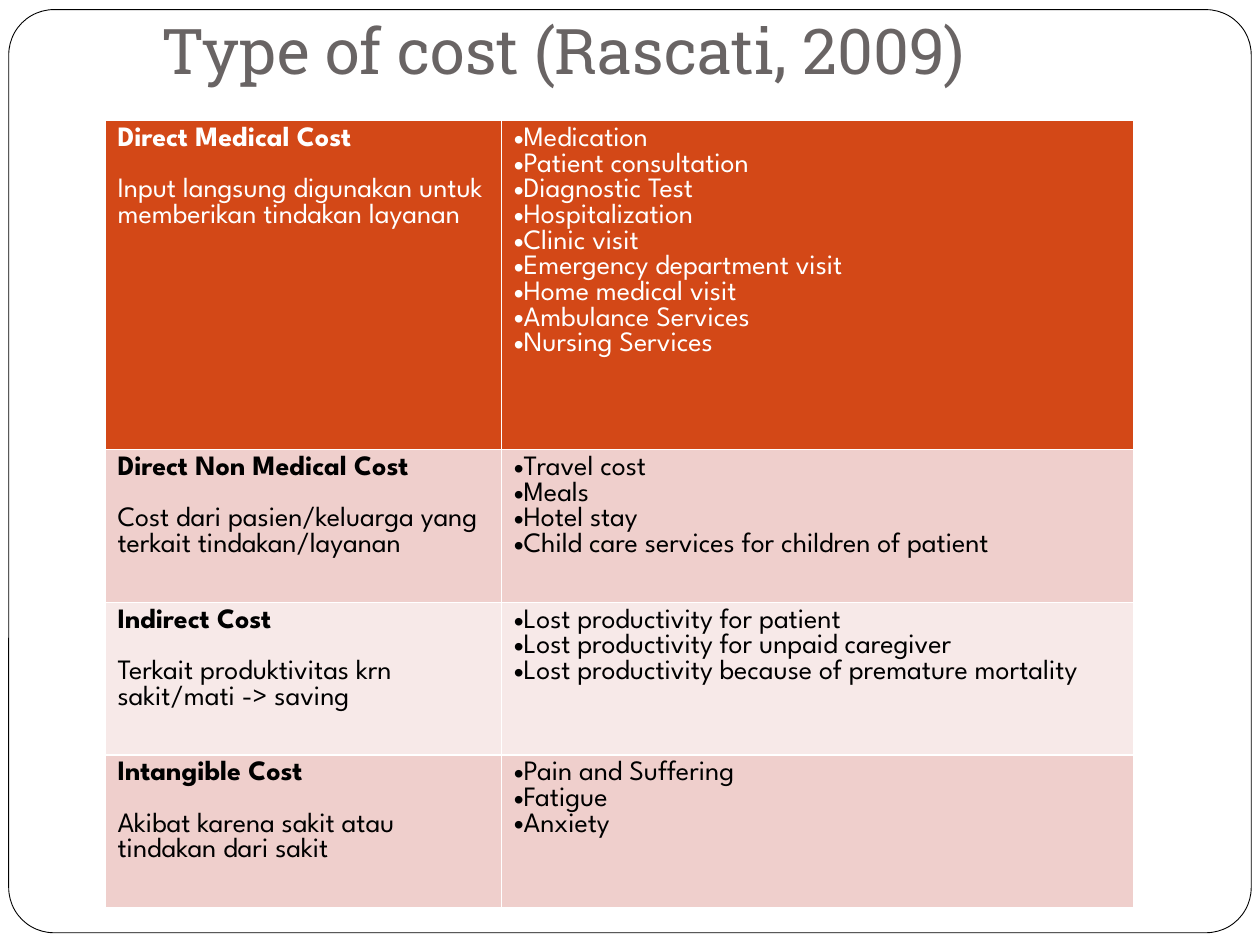
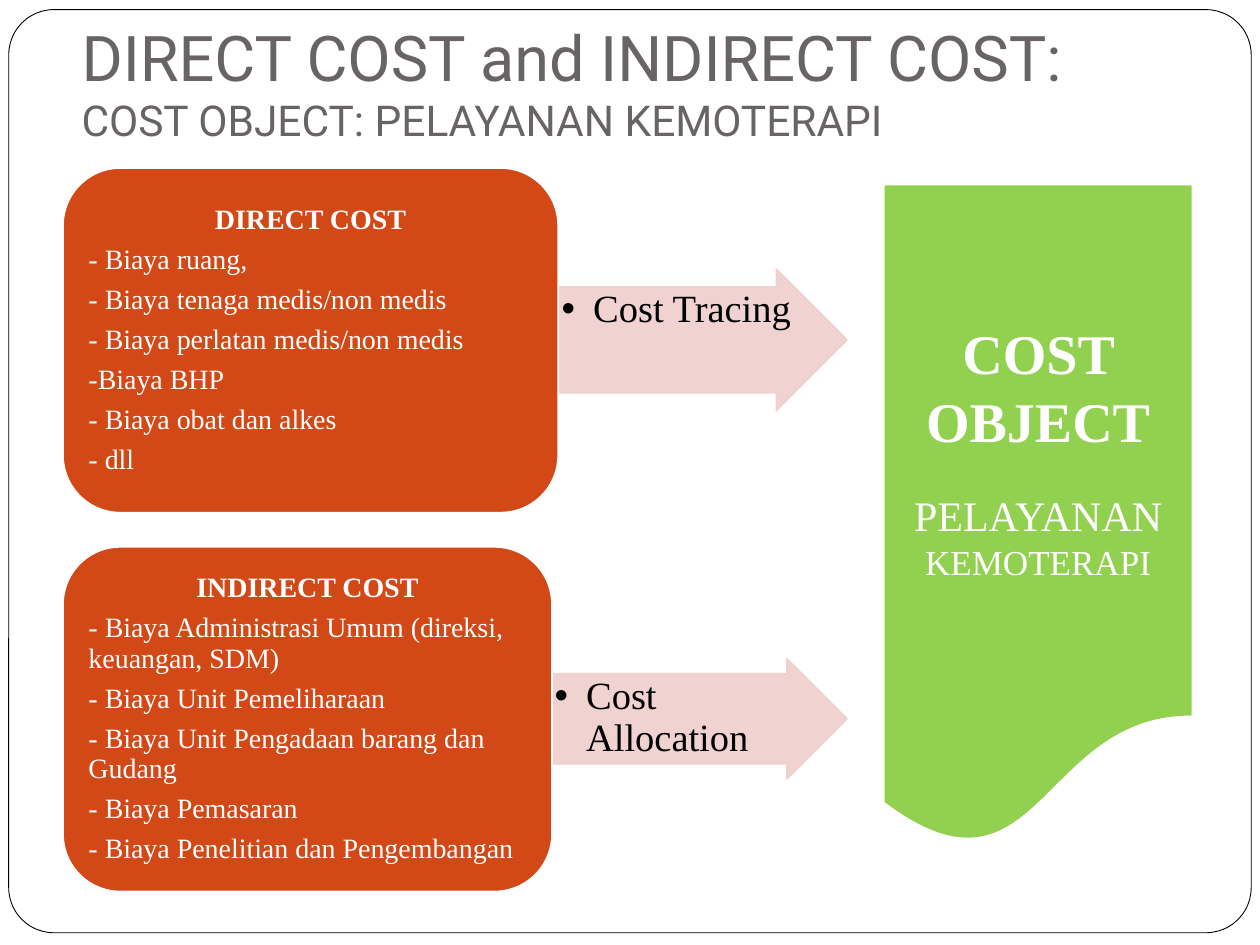
from dataclasses import dataclass

from lxml.etree import SubElement
from pptx import Presentation
from pptx.dml.color import RGBColor
from pptx.enum.shapes import MSO_SHAPE as Shape
from pptx.enum.text import MSO_ANCHOR as Anchor, PP_ALIGN as Align
from pptx.oxml.ns import qn
from pptx.util import Pt


@dataclass(frozen=True)
class Theme:
    white: str = "FFFFFF"
    black: str = "000000"
    title: str = "696464"
    accent: str = "D34817"
    band_dark: str = "EFCFCC"
    band_light: str = "F7E9E8"
    goal: str = "92D050"
    slab: str = "Roboto Slab"
    sans: str = "Roboto"
    table: str = "League Spartan"
    serif: str = "Times New Roman"
    title_size: float = 36
    subtitle_size: float = 24.3
    body_size: float = 16
    arrow_size: float = 22
    goal_sizes: tuple = (32, 24, 20)


THEME = Theme()
TITLE_FRAME = dict(word_wrap=True, vertical_anchor=Anchor.BOTTOM, margin_left=Pt(7.2),
                   margin_right=Pt(7.2), margin_top=Pt(3.6), margin_bottom=Pt(7.2))
CARD_FRAME = dict(word_wrap=True, vertical_anchor=Anchor.MIDDLE, margin_left=Pt(5),
                  margin_right=Pt(5), margin_top=Pt(2.5), margin_bottom=Pt(2.5))
ARROW_FRAME = dict(word_wrap=True, vertical_anchor=Anchor.TOP, margin_left=Pt(1.5),
                   margin_right=Pt(1.5), margin_top=Pt(1.5), margin_bottom=Pt(1.5))
GOAL_FRAME = dict(word_wrap=True, vertical_anchor=Anchor.MIDDLE)

COST_TYPES = [
    ("Direct Medical Cost", "Input langsung digunakan untuk memberikan tindakan layanan",
     ["Medication", "Patient consultation", "Diagnostic Test", "Hospitalization",
      "Clinic visit", "Emergency department visit", "Home medical visit",
      "Ambulance Services", "Nursing Services"]),
    ("Direct Non Medical Cost", "Cost dari pasien/keluarga yang terkait tindakan/layanan",
     ["Travel cost", "Meals", "Hotel stay", "Child care services for children of patient"]),
    ("Indirect Cost", "Terkait produktivitas krn sakit/mati -> saving",
     ["Lost productivity for patient", "Lost productivity for unpaid caregiver",
      "Lost productivity because of premature mortality"]),
    ("Intangible Cost", "Akibat karena sakit atau tindakan dari sakit",
     ["Pain and Suffering", "Fatigue", "Anxiety"]),
]
DIRECT_COSTS = ["- Biaya ruang,", "- Biaya tenaga medis/non medis",
                "- Biaya perlatan medis/non medis", "-Biaya BHP",
                "- Biaya obat dan alkes", "- dll"]
INDIRECT_COSTS = ["- Biaya Administrasi Umum (direksi, keuangan, SDM)",
                  "- Biaya Unit Pemeliharaan",
                  "- Biaya Unit Pengadaan barang dan Gudang", "- Biaya Pemasaran",
                  "- Biaya Penelitian dan Pengembangan"]


def set_all(target, values):
    for name, value in values.items():
        setattr(target, name, value)


def paint(fill, color):
    fill.solid()
    fill.fore_color.rgb = RGBColor.from_string(color)


def add_run(paragraph, text, font, size, color, bold=False):
    run = paragraph.add_run()
    run.text = text
    set_all(run.font, dict(name=font, size=Pt(size), bold=bold))
    run.font.color.rgb = RGBColor.from_string(color)


def next_paragraph(frame, **values):
    """Return the empty first paragraph of a frame, or a new one after its text."""
    first = frame.paragraphs[0]
    paragraph = frame.add_paragraph() if first.runs else first
    set_all(paragraph, values)
    return paragraph


def add_bullet(paragraph, indent=0):
    properties = paragraph._p.get_or_add_pPr()
    properties.set("marL", str(Pt(indent)))
    properties.set("indent", str(-Pt(indent)))
    SubElement(properties, qn("a:buFont"), typeface="Arial")
    SubElement(properties, qn("a:buChar"), char="•")


def add_block(slide, kind, box, fill, line, weight=1.0, adjustments=(), frame=None):
    block = slide.shapes.add_shape(kind, *map(Pt, box))
    block.shadow.inherit = False
    paint(block.fill, fill)
    paint(block.line.fill, line)
    block.line.width = Pt(weight)
    for index, value in enumerate(adjustments):
        block.adjustments[index] = value
    set_all(block.text_frame, frame or {})
    return block


def add_framed_slide(deck):
    slide = deck.slides.add_slide(deck.slide_layouts[6])
    add_block(slide, Shape.ROUNDED_RECTANGLE, (5, 5.5, 710, 527.5),
              THEME.white, THEME.black, 0.5, [0.049])
    return slide


def add_title(slide, box, font, align, title, subtitle=None):
    frame = slide.shapes.add_textbox(*map(Pt, box)).text_frame
    set_all(frame, TITLE_FRAME)
    paragraph = next_paragraph(frame, alignment=align)
    add_run(paragraph, title, font, THEME.title_size, THEME.title)
    if subtitle:
        paragraph.add_line_break()
        add_run(paragraph, subtitle, font, THEME.subtitle_size, THEME.title)


def format_cell(cell, fill):
    properties = cell._tc.get_or_add_tcPr()
    for side in ("lnL", "lnR", "lnT", "lnB"):
        border = SubElement(properties, qn(f"a:{side}"), w=str(Pt(1)))
        solid = SubElement(border, qn("a:solidFill"))
        SubElement(solid, qn("a:srgbClr"), val=THEME.white)
    paint(cell.fill, fill)


def add_cost_table(slide):
    widths, heights = (226.5, 361.5), (188, 87.25, 87.25, 87.25)
    table = slide.shapes.add_table(len(heights), len(widths), Pt(60), Pt(69),
                                   Pt(sum(widths)), Pt(sum(heights))).table
    set_all(table, dict(first_row=False, horz_banding=False))
    for column, width in zip(table.columns, widths):
        column.width = Pt(width)
    fills = (THEME.accent, THEME.band_dark, THEME.band_light, THEME.band_dark)
    for row, height, fill, cost in zip(table.rows, heights, fills, COST_TYPES):
        row.height = Pt(height)
        name, meaning, examples = cost
        color = THEME.white if fill == THEME.accent else THEME.black
        look = (THEME.table, THEME.body_size, color)
        kind_cell, example_cell = row.cells
        for cell in row.cells:
            format_cell(cell, fill)
        add_run(next_paragraph(kind_cell.text_frame), name, *look, bold=True)
        add_run(next_paragraph(kind_cell.text_frame, space_before=Pt(14.7)), meaning, *look)
        for example in examples:
            paragraph = next_paragraph(example_cell.text_frame)
            add_bullet(paragraph)
            add_run(paragraph, example, *look)


def add_cost_card(slide, box, heading, costs):
    frame = add_block(slide, Shape.ROUNDED_RECTANGLE, box, THEME.accent, THEME.white,
                      frame=CARD_FRAME).text_frame
    for index, text in enumerate([heading, *costs]):
        is_heading = index == 0
        paragraph = next_paragraph(frame, line_spacing=0.9, space_after=Pt(5.6),
                                   alignment=Align.CENTER if is_heading else Align.LEFT)
        add_run(paragraph, text, THEME.serif, THEME.body_size, THEME.white, is_heading)


def add_method_arrow(slide, box, method, align):
    arrow = add_block(slide, Shape.RIGHT_ARROW, box, THEME.band_dark, THEME.band_dark,
                      adjustments=[0.75, 0.5], frame=ARROW_FRAME)
    for color in arrow._element.spPr.iter(qn("a:srgbClr")):
        SubElement(color, qn("a:alpha"), val="90000")
    paragraph = next_paragraph(arrow.text_frame, alignment=align, line_spacing=0.9)
    add_bullet(paragraph, 18)
    add_run(paragraph, method, THEME.serif, THEME.arrow_size, THEME.black)


def add_cost_object(slide):
    frame = add_block(slide, Shape.FLOWCHART_DOCUMENT, (506, 106.5, 174.5, 376.5),
                      THEME.goal, THEME.goal, frame=GOAL_FRAME).text_frame
    heading, service, therapy = THEME.goal_sizes
    add_run(next_paragraph(frame, alignment=Align.CENTER), "COST OBJECT",
            THEME.serif, heading, THEME.white, bold=True)
    paragraph = next_paragraph(frame, alignment=Align.CENTER, space_before=Pt(20.7))
    add_run(paragraph, "PELAYANAN ", THEME.serif, service, THEME.white)
    add_run(paragraph, "KEMOTERAPI", THEME.serif, therapy, THEME.white)


def build_cost_types(deck):
    slide = add_framed_slide(deck)
    add_title(slide, (28, 0, 588, 57), THEME.slab, Align.CENTER,
              "Type of cost (Rascati, 2009)")
    add_cost_table(slide)


def build_cost_object(deck):
    slide = add_framed_slide(deck)
    add_title(slide, (39.5, 0, 588, 90), THEME.sans, Align.LEFT,
              "DIRECT COST and INDIRECT COST:", "COST OBJECT: PELAYANAN KEMOTERAPI")
    add_method_arrow(slide, (319, 154, 165, 80.5), "Cost Tracing", Align.CENTER)
    add_cost_card(slide, (36, 96, 283, 197), "DIRECT COST", DIRECT_COSTS)
    add_method_arrow(slide, (315.5, 376.5, 168.5, 68.5), "Cost Allocation", Align.LEFT)
    add_cost_card(slide, (36, 312.5, 279.5, 197), "INDIRECT COST", INDIRECT_COSTS)
    add_cost_object(slide)


def main():
    deck = Presentation()
    set_all(deck, dict(slide_width=Pt(720), slide_height=Pt(540)))
    build_cost_types(deck)
    build_cost_object(deck)
    deck.save("out.pptx")


if __name__ == "__main__":
    main()
